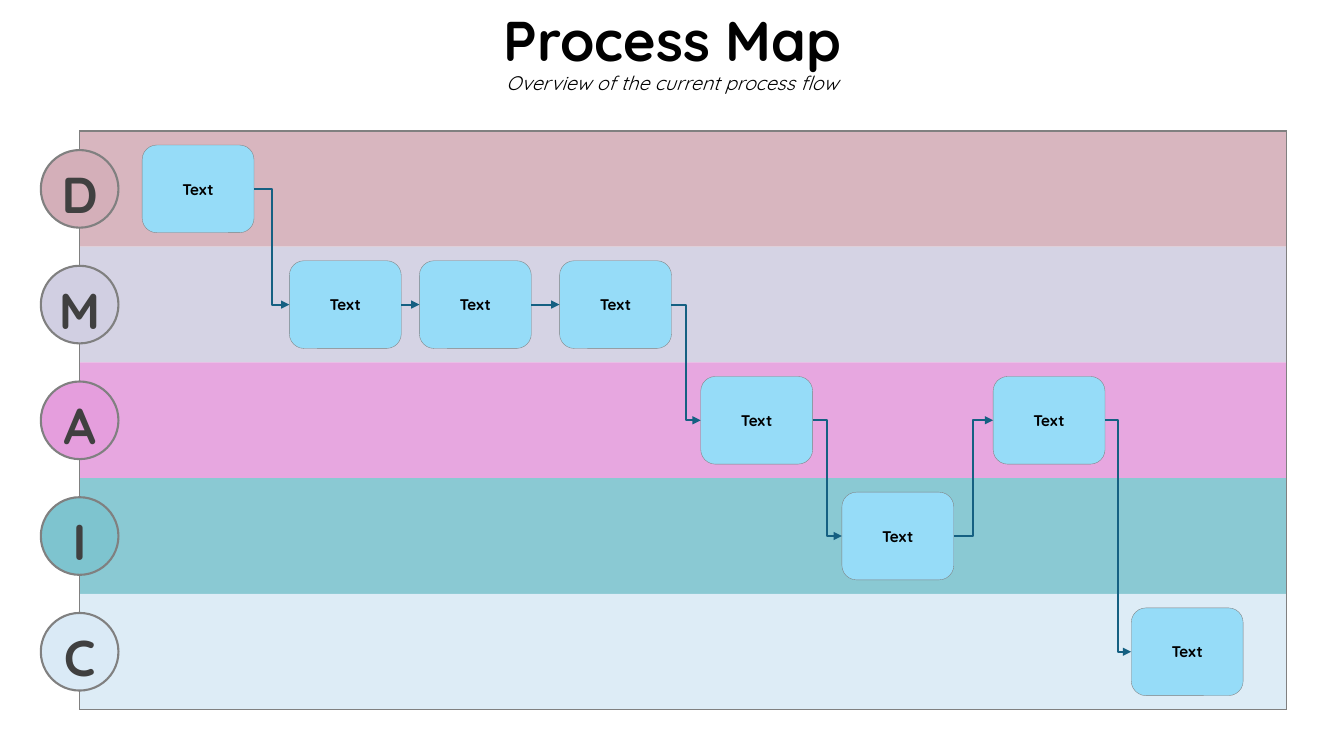
from lxml import etree
from pptx import Presentation
from pptx.dml.color import RGBColor
from pptx.enum.shapes import MSO_CONNECTOR as Connector, MSO_SHAPE as Shape
from pptx.enum.text import MSO_ANCHOR as Anchor, PP_ALIGN as Align
from pptx.oxml.ns import qn
from pptx.util import Inches, Pt

# Lanes: letter and colour; steps: lane number and left edge, in flow order
LANES = [("D", "D4AFB9"), ("M", "D1CFE2"), ("A", "E59EDD"),
         ("I", "7EC4CF"), ("C", "DAEAF6")]
STEPS = [(0, 1.41), (1, 2.87), (1, 4.16), (1, 5.55),
         (2, 6.95), (3, 8.35), (2, 9.85), (4, 11.22)]
MAP_LEFT, MAP_TOP, MAP_WIDTH, MAP_HEIGHT = 0.79, 1.3, 11.97, 5.74
LANE_HEIGHT = MAP_HEIGHT / len(LANES)
BADGE_SIZE = 0.77
STEP_WIDTH, STEP_HEIGHT = 1.11, 0.87
LEFT_SIDE, RIGHT_SIDE = 1, 3


def paint(color_format, hex_color):
    color_format.rgb = RGBColor.from_string(hex_color)


def write(paragraph, text, size=11, color="000000", bold=False, italic=False,
          spacing=None):
    paragraph.alignment = Align.CENTER
    if spacing:
        paragraph.line_spacing = spacing
    run = paragraph.add_run()
    run.text = text
    run.font.name = "Quicksand"
    run.font.size = Pt(size)
    run.font.bold = bold
    run.font.italic = italic
    paint(run.font.color, color)


def lane_top(lane, height):
    """Top of an item of this height centred in its lane."""
    return MAP_TOP + (lane + 0.5) * LANE_HEIGHT - height / 2


class ProcessSlide:
    outline = "808080"
    step_fill = "96DCF8"
    arrow_color = "156082"
    letter_color = "404040"

    def __init__(self, deck):
        self.slide = deck.slides.add_slide(deck.slide_layouts[5])
        self.shapes = self.slide.shapes

    def title(self, heading, subtitle):
        title = self.shapes.title
        title.left, title.top = Inches(4.58), Inches(0)
        title.width, title.height = Inches(4.18), Inches(1.08)
        title.text_frame.vertical_anchor = Anchor.MIDDLE
        paragraph = title.text_frame.paragraphs[0]
        write(paragraph, heading, size=40, bold=True, spacing=0.9)
        paragraph.add_line_break()
        line_break = paragraph._p.find(qn("a:br"))
        etree.SubElement(line_break, qn("a:rPr"), sz="4000")
        write(paragraph, subtitle, size=14, italic=True)

    def swimlanes(self):
        lanes = self.shapes.add_table(
            len(LANES), 1, Inches(MAP_LEFT), Inches(MAP_TOP),
            Inches(MAP_WIDTH), Inches(MAP_HEIGHT)).table
        lanes.first_row = lanes.horz_banding = False
        for row, (_, color) in enumerate(LANES):
            cell = lanes.cell(row, 0)
            cell.fill.solid()
            paint(cell.fill.fore_color, color)
            properties = cell._tc.tcPr
            rgb = properties.find(".//" + qn("a:srgbClr"))
            etree.SubElement(rgb, qn("a:alpha"), val="90000")
            self.lane_borders(properties, row)

    def lane_borders(self, properties, row):
        visible = {"lnL": True, "lnR": True, "lnT": row == 0,
                   "lnB": row == len(LANES) - 1}
        for index, (side, shown) in enumerate(visible.items()):
            border = etree.Element(qn(f"a:{side}"), w=str(Pt(1)))
            if shown:
                fill = etree.SubElement(border, qn("a:solidFill"))
                etree.SubElement(fill, qn("a:srgbClr"), val=self.outline)
            else:
                etree.SubElement(border, qn("a:noFill"))
            properties.insert(index, border)

    def box(self, kind, left, top, width, height, fill, line_width):
        box = self.shapes.add_shape(kind, Inches(left), Inches(top),
                                    Inches(width), Inches(height))
        box.shadow.inherit = False
        box.fill.solid()
        paint(box.fill.fore_color, fill)
        paint(box.line.color, self.outline)
        box.line.width = Pt(line_width)
        box.text_frame.vertical_anchor = Anchor.MIDDLE
        return box

    def badge(self, lane, letter, color):
        badge = self.box(Shape.OVAL, MAP_LEFT - BADGE_SIZE / 2,
                         lane_top(lane, BADGE_SIZE), BADGE_SIZE, BADGE_SIZE,
                         color, 1.5)
        frame = badge.text_frame
        frame.margin_left = frame.margin_right = 0
        frame.margin_top = frame.margin_bottom = 0
        write(frame.paragraphs[0], letter, size=36, color=self.letter_color,
              bold=True, spacing=1.15)

    def step(self, lane, left):
        step = self.box(Shape.ROUNDED_RECTANGLE, left,
                        lane_top(lane, STEP_HEIGHT), STEP_WIDTH, STEP_HEIGHT,
                        self.step_fill, 0.25)
        write(step.text_frame.paragraphs[0], "Text", bold=True)
        return step

    def arrow(self, source, target):
        same_lane = source.top == target.top
        kind = Connector.STRAIGHT if same_lane else Connector.ELBOW
        arrow = self.shapes.add_connector(
            kind, source.left + source.width, source.top + source.height // 2,
            target.left, target.top + target.height // 2)
        arrow.begin_connect(source, RIGHT_SIDE)
        arrow.end_connect(target, LEFT_SIDE)
        paint(arrow.line.color, self.arrow_color)
        arrow.line.width = Pt(1.5)
        etree.SubElement(arrow.line._get_or_add_ln(), qn("a:tailEnd"),
                         type="triangle")
        etree.SubElement(arrow._element.spPr, qn("a:effectLst"))


def main():
    deck = Presentation()
    deck.slide_width, deck.slide_height = Inches(13.33), Inches(7.5)
    page = ProcessSlide(deck)

    # Heading and lanes
    page.title("Process Map", "Overview of the current process flow")
    page.swimlanes()
    for lane, (letter, color) in enumerate(LANES):
        page.badge(lane, letter, color)

    # Steps, each joined to the next
    steps = [page.step(lane, left) for lane, left in STEPS]
    for source, target in zip(steps, steps[1:]):
        page.arrow(source, target)

    deck.save("out.pptx")


if __name__ == "__main__":
    main()
